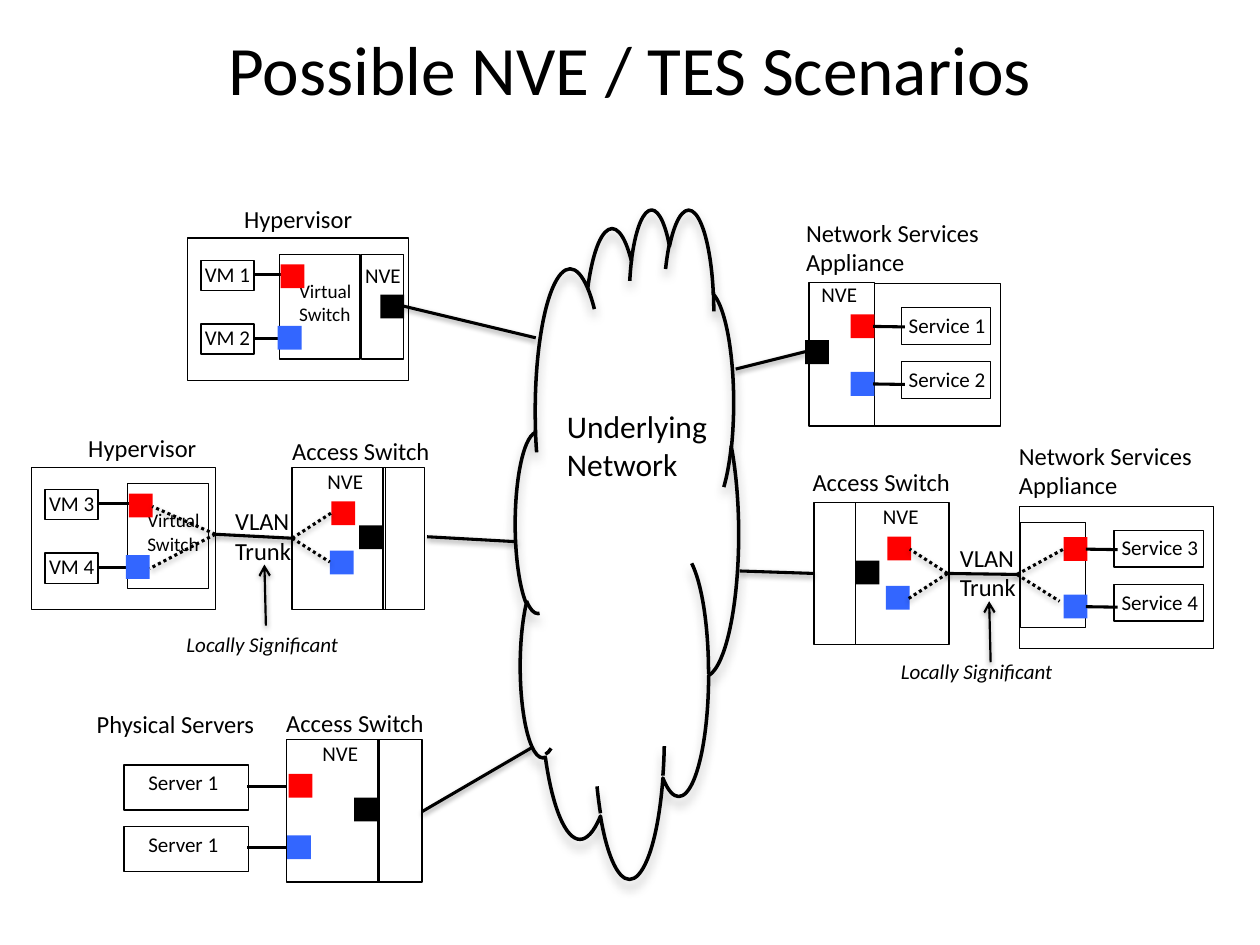
from lxml import etree
from pptx import Presentation
from pptx import util as u
from pptx.dml.color import RGBColor
from pptx.enum import dml, shapes, text
from pptx.oxml import ns

COLORS = {"ink": "000000", "red": "FF0000", "blue": "3366FF"}
PORT = 0.48
FRAME_HEIGHT = 2.87
NVE_SIZE = (1.32, 0.76)


def cm(*lengths):
    return [u.Cm(length) for length in lengths]


def rgb(name):
    return RGBColor.from_string(COLORS[name])


def add_shadow(effects, blur, distance, opacity):
    """Drop a soft black shadow straight down; blur and distance in points."""
    shadow = etree.SubElement(effects, ns.qn("a:outerShdw"), blurRad=str(u.Pt(blur)),
                              dist=str(u.Pt(distance)), dir="5400000", rotWithShape="0")
    ink = etree.SubElement(shadow, ns.qn("a:srgbClr"), val=COLORS["ink"])
    etree.SubElement(ink, ns.qn("a:alpha"), val=str(opacity * 1000))


def outline(slide, x, y, width, height, kind=shapes.MSO_SHAPE.RECTANGLE, weight=0.75):
    box = slide.shapes.add_shape(kind, *cm(x, y, width, height))
    box.shadow.inherit = False
    box.fill.background()
    box.line.color.rgb = rgb("ink")
    box.line.width = u.Pt(weight)
    return box


def port(slide, color, x, y):
    square = slide.shapes.add_shape(shapes.MSO_SHAPE.RECTANGLE, *cm(x, y, PORT, PORT))
    square.shadow.inherit = False
    square.fill.solid()
    square.fill.fore_color.rgb = rgb(color)
    square.line.fill.background()


def label(slide, words, x, y, width, height, size=12, italic=False):
    box = slide.shapes.add_textbox(*cm(x, y, width, height))
    frame = box.text_frame
    frame.word_wrap = False
    frame.text = words
    for paragraph in frame.paragraphs:
        font = paragraph.font
        font.name, font.size, font.italic = "Calibri", u.Pt(size), italic
        font.color.rgb = rgb("ink")
    return frame


def link(slide, start, end, shadow=True, dotted=False, weight=1.75):
    line = slide.shapes.add_connector(shapes.MSO_CONNECTOR.STRAIGHT, *cm(*start, *end))
    line.line.color.rgb = rgb("ink")
    line.line.width = u.Pt(weight)
    if dotted:
        line.line.dash_style = dml.MSO_LINE.ROUND_DOT
    effects = etree.SubElement(line._element.spPr, ns.qn("a:effectLst"))
    if shadow:
        add_shadow(effects, 3.1, 1.6, 38)
    return line


def arrow(slide, start, tip):
    line = link(slide, start, tip, weight=1.25).line
    etree.SubElement(line._get_or_add_ln(), ns.qn("a:tailEnd"), type="arrow")


def title(slide):
    frame = label(slide, "Possible NVE / TES Scenarios", 1.27, 0.51, 22.86, 1.73, 39.6)
    frame.word_wrap = True
    frame.vertical_anchor = text.MSO_ANCHOR.MIDDLE
    frame.paragraphs[0].alignment = text.PP_ALIGN.CENTER


def underlying_network(slide):
    cloud = outline(slide, 10.39, 4.19, 4.5, 13.49, shapes.MSO_SHAPE.CLOUD, 2)
    add_shadow(cloud._element.spPr.find(ns.qn("a:effectLst")), 6, 4, 27)
    label(slide, "Underlying\nNetwork", 11.18, 8.08, 3.35, 1.8, 18)


def hypervisor(slide, x, y, width, switch_x, machines):
    outline(slide, x, y, width, FRAME_HEIGHT)
    label(slide, "Hypervisor", x + 0.89, y - 0.82, 2.72, 0.86, 14)
    outline(slide, switch_x, y + 0.33, 1.63, 2.11)
    label(slide, "Virtual\nSwitch", switch_x + 0.15, y + 0.71, 1.6, 1.19, 11)
    ports = (("red", switch_x + 0.03), ("blue", switch_x - 0.03))
    for row, (name, (color, port_x)) in enumerate(zip(machines, ports)):
        top = y + 0.45 + row * 1.28
        outline(slide, x + 0.27, top, 1.07, 0.61)
        label(slide, name, x + 0.1, top - 0.11, 1.45, 0.76)
        link(slide, (x + 1.34, top + 0.29), (port_x, top + 0.29), shadow=False)
        port(slide, color, port_x, y + 0.53 + row * 1.24)


def access_switch(slide, x, y, heading, nve_dx, red_dx, blue_dy, black_dx, uplink):
    """Draw a switch; heading and uplink are (dx, dy) and (dx, width)."""
    outline(slide, x, y, 1.88, FRAME_HEIGHT)
    outline(slide, x + uplink[0], y, uplink[1], FRAME_HEIGHT)
    label(slide, "Access Switch", x + heading[0], y + heading[1], 3.3, 0.86, 14)
    label(slide, "NVE", x + nve_dx, y - 0.1, *NVE_SIZE)
    port(slide, "red", x + red_dx, y + 0.69)
    port(slide, "blue", x + red_dx - 0.03, y + blue_dy)
    port(slide, "black" if "black" in COLORS else "ink", x + black_dx, y + 1.17)


def service_appliance(slide, right, y, width, inner, services):
    outline(slide, right - width, y, width, FRAME_HEIGHT)
    outline(slide, *inner)
    label(slide, "Network Services\nAppliance", right - 4.17, y - 1.45, 4.01, 1.45, 14)
    for row, (name, color) in enumerate(zip(services, ("red", "blue"))):
        top = y + 0.48 + row * 1.09
        outline(slide, right - 2, top, 1.8, 0.74)
        label(slide, name, right - 2.1, top - 0.03, 2.08, 0.76)
        port_y = y + 0.62 + row * 1.16
        port(slide, color, right - 3.02, port_y)
        link(slide, (right - 2.57, port_y + 0.24), (right - 1.93, port_y + 0.25), shadow=False)


def physical_servers(slide):
    label(slide, "Physical Servers", 1.7, 14.17, 3.71, 0.86, 14)
    for row in range(2):
        top = 15.42 + row * 1.24
        outline(slide, 2.5, top, 2.51, 0.91)
        label(slide, "Server 1", 2.74, top - 0.03, 1.93, 0.76)
        link(slide, (4.98, top + 0.43), (5.77, top + 0.43), shadow=False)


def vlan_trunk(slide, start, end, start_ports, end_ports, tip, note):
    link(slide, start, end)
    for junction, ports in ((start, start_ports), (end, end_ports)):
        for port_side in ports:
            link(slide, junction, port_side, dotted=True)
    label(slide, "VLAN\nTrunk", tip[0] - 0.84, tip[1] - 1.3, 1.65, 1.45, 14)
    label(slide, "Locally Significant", *note, 3.71, 0.76, italic=True)
    arrow(slide, (tip[0] + 0.03, tip[1] + 1.23), tip)


def main():
    deck = Presentation()
    deck.slide_width, deck.slide_height = cm(25.4, 19.05)
    slide = deck.slides.add_slide(deck.slide_layouts[6])

    title(slide)
    underlying_network(slide)

    hypervisor(slide, 3.78, 4.8, 4.45, 5.63, ("VM 1", "VM 2"))
    outline(slide, 7.29, 5.13, 0.84, 2.11)
    label(slide, "NVE", 7.11, 5.16, *NVE_SIZE)
    port(slide, "ink", 7.67, 5.94)

    hypervisor(slide, 0.64, 9.42, 3.71, 2.57, ("VM 3", "VM 4"))
    access_switch(slide, 5.89, 9.42, (-0.25, -0.76), 0.46, 0.79, 1.68, 1.35, (1.83, 0.84))
    vlan_trunk(slide, (4.34, 10.77), (5.89, 10.85), ((3.07, 10.21), (3.02, 11.46)),
               ((6.68, 10.34), (6.65, 11.33)), (5.33, 11.38), (3.51, 12.6))

    physical_servers(slide)
    access_switch(slide, 5.77, 14.91, (-0.25, -0.76), 0.48, 0.05, 1.93, 1.37, (1.85, 0.89))

    service_appliance(slide, 20.17, 5.72, 2.54, (16.31, 5.69, 1.32, 2.9),
                      ("Service 1", "Service 2"))
    label(slide, "NVE", 16.31, 5.56, *NVE_SIZE)
    port(slide, "ink", 16.23, 6.86)

    access_switch(slide, 17.25, 10.13, (-1.12, -0.84), 0.3, 0.64, 1.68, 0, (-0.84, 0.84))
    service_appliance(slide, 24.46, 10.21, 3.91, (20.57, 10.54, 1.32, 2.11),
                      ("Service 3", "Service 4"))
    vlan_trunk(slide, (19.1, 11.56), (20.5, 11.58), ((18.34, 11.07), (18.31, 12.07)),
               ((21.44, 11.07), (21.36, 12.12)), (19.94, 12.12), (17.91, 13.16))

    network_links = (((8.13, 6.17), (10.8, 6.81)), ((8.61, 10.82), (10.41, 10.92)),
                     ((8.51, 16.36), (10.74, 15.06)), ((14.91, 11.51), (16.41, 11.56)),
                     ((14.83, 7.44), (16.23, 7.09)))
    for start, end in network_links:
        link(slide, start, end)

    deck.save("out.pptx")


if __name__ == "__main__":
    main()
